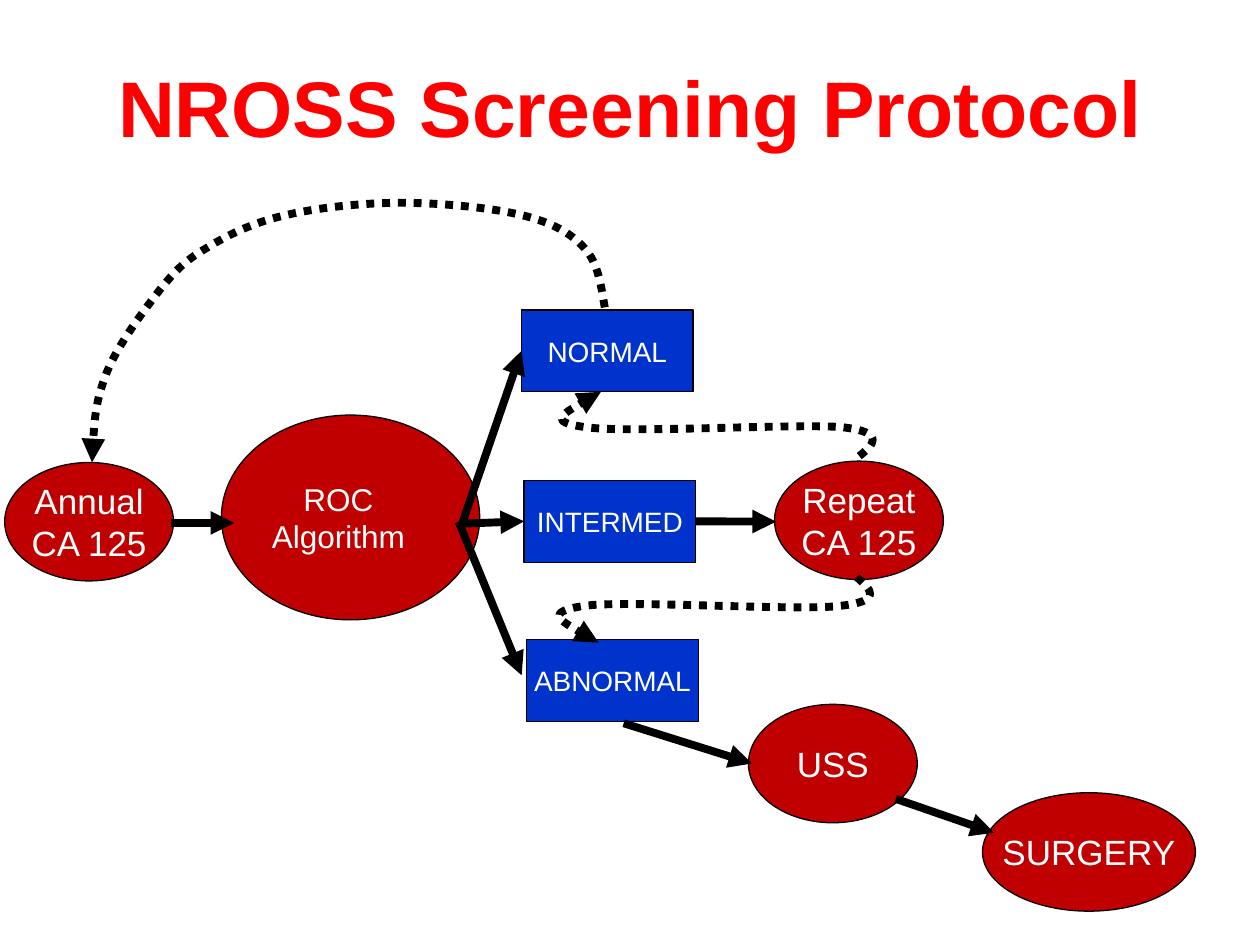
from lxml.etree import SubElement
from pptx import Presentation
from pptx.dml.color import RGBColor
from pptx.enum.dml import MSO_LINE
from pptx.enum.shapes import MSO_CONNECTOR, MSO_SHAPE
from pptx.enum.text import MSO_ANCHOR, MSO_AUTO_SIZE, PP_ALIGN
from pptx.oxml.ns import qn
from pptx.util import Pt

COLORS = {"title": "FF0000", "step": "C00000", "result": "0033CC",
          "line": "000000", "text": "FFFFFF"}
LEFT, RIGHT = 1, 3  # connection sites of a rectangle


def color(name):
    return RGBColor.from_string(COLORS[name])


class FlowSlide:
    """Style and current slide of the flow chart."""
    font = "Arial"
    arrow_width = 4.5
    outline_width = 0.75

    def __init__(self, presentation):
        self.slide = presentation.slides.add_slide(presentation.slide_layouts[5])
        self.shapes = self.slide.shapes

    def set_text(self, shape, text, size, color_name, bold=False, **frame_format):
        frame = shape.text_frame
        frame.text = text
        frame_format = {"auto_size": MSO_AUTO_SIZE.NONE, **frame_format}
        for name, value in frame_format.items():
            setattr(frame, name, value)
        for paragraph in frame.paragraphs:
            paragraph.alignment = PP_ALIGN.CENTER
            for name, value in {"name": self.font, "size": Pt(size), "bold": bold}.items():
                setattr(paragraph.font, name, value)
            paragraph.font.color.rgb = color(color_name)

    def title(self, text, left, top, width, height):
        title = self.shapes.title
        place = {"left": left, "top": top, "width": width, "height": height}
        for name, value in place.items():
            setattr(title, name, Pt(value))
        self.set_text(title, text, 45, "title", bold=True, word_wrap=True,
                      vertical_anchor=MSO_ANCHOR.BOTTOM)

    def box(self, kind, fill, text, size, left, top, width, height, **frame_format):
        shape = self.shapes.add_shape(kind, Pt(left), Pt(top), Pt(width), Pt(height))
        shape.shadow.inherit = False
        shape.fill.solid()
        shape.fill.fore_color.rgb = color(fill)
        shape.line.color.rgb = color("line")
        shape.line.width = Pt(self.outline_width)
        self.set_text(shape, text, size, "text", word_wrap=False,
                      vertical_anchor=MSO_ANCHOR.MIDDLE, **frame_format)
        return shape

    def step(self, text, left, top, width=96.5, height=67.7, size=20, **frame_format):
        return self.box(MSO_SHAPE.OVAL, "step", text, size,
                        left, top, width, height, **frame_format)

    def result(self, text, left, top):
        return self.box(MSO_SHAPE.RECTANGLE, "result", text, 16, left, top, 98, 46.8)

    def arrow_line(self, line):
        line.color.rgb = color("line")
        line.width = Pt(self.arrow_width)

    def arrow_head(self, shape):
        outline = shape.element.spPr.find(qn("a:ln"))
        SubElement(outline, qn("a:tailEnd"), type="triangle")

    def arrow(self, start, end, source=None, target=None):
        points = [Pt(value) for value in (*start, *end)]
        connector = self.shapes.add_connector(MSO_CONNECTOR.STRAIGHT, *points)
        if source:
            connector.begin_connect(source, RIGHT)
        if target:
            connector.end_connect(target, LEFT)
        self.arrow_line(connector.line)
        self.arrow_head(connector)
        SubElement(connector.element.spPr, qn("a:effectLst"))

    def dotted_curve(self, start, *points):
        """Draw Bézier segments: every three points are two controls and an end."""
        builder = self.shapes.build_freeform(Pt(start[0]), Pt(start[1]))
        builder.add_line_segments([(Pt(x), Pt(y)) for x, y in points], close=False)
        shape = builder.convert_to_shape()
        outline = next(shape.element.iter(qn("a:path")))
        segments = outline.findall(qn("a:lnTo"))
        for first in range(0, len(segments), 3):
            curve = SubElement(outline, qn("a:cubicBezTo"))
            for segment in segments[first:first + 3]:
                curve.append(segment[0])
                outline.remove(segment)
        shape.shadow.inherit = False
        shape.fill.background()
        self.arrow_line(shape.line)
        shape.line.dash_style = MSO_LINE.ROUND_DOT
        self.arrow_head(shape)


def main():
    presentation = Presentation()
    presentation.slide_width, presentation.slide_height = Pt(720), Pt(540)
    chart = FlowSlide(presentation)
    chart.title("NROSS Screening Protocol", 0, 42, 720, 49)

    chart.step("USS", 427.7, 402.5)
    chart.step("Annual\nCA 125", 2.7, 264.3)
    chart.step("ROC\nAlgorithm", 126.5, 237.2, 147.6, 117, size=18, margin_right=Pt(21))
    chart.step("SURGERY", 561.4, 453, width=121.7)
    chart.result("ABNORMAL", 301, 365.6)
    intermediate = chart.result("INTERMED", 299.5, 274.5)
    normal = chart.result("NORMAL", 298, 177.1)
    chart.step("Repeat\nCA 125", 442.6, 263.5)

    chart.dotted_curve(
        (345.6, 175.7),
        (343.5, 163.5), (342, 150.5), (334, 141.8),
        (326.2, 133.2), (316, 127.4), (298.8, 123.1),
        (281.5, 118.8), (252, 115.9), (229, 115.9),
        (206.6, 115.9), (180.7, 118.8), (162.7, 123.1),
        (144, 127.4), (129.6, 134.6), (118, 141.8),
        (105.8, 149), (100.8, 154), (91.4, 165.6),
        (82, 177.8), (67.7, 196.6), (61.2, 212.4),
        (54.7, 229), (53.3, 246.2), (52.6, 264.2))
    chart.arrow((97.9, 298.8), (133.9, 298.8))
    chart.arrow((265, 299.2), (299.5, 298), target=intermediate)
    chart.arrow((262.1, 298.1), (298.1, 385.9))
    chart.arrow((264.2, 298.8), (298, 200.5), target=normal)
    chart.arrow((397.5, 298), (443.5, 298.1), source=intermediate)
    chart.dotted_curve(
        (491, 260.6),
        (499, 254.2), (506.9, 247), (481, 244.1),
        (455, 241.9), (357.8, 247.7), (334.8, 244.1),
        (311.8, 241.2), (327.6, 232.6), (343.4, 223.9))
    chart.dotted_curve(
        (489.6, 329.8),
        (497.5, 337), (505.4, 343.4), (479.5, 346.3),
        (453.6, 349.2), (356.4, 342.7), (333.4, 346.3),
        (310.3, 349.9), (326.2, 358.6), (342, 367.2))
    chart.arrow((511.9, 456.5), (568.1, 475.9))
    chart.arrow((356.4, 413.3), (429.8, 436.3))
    presentation.save("out.pptx")


if __name__ == "__main__":
    main()
